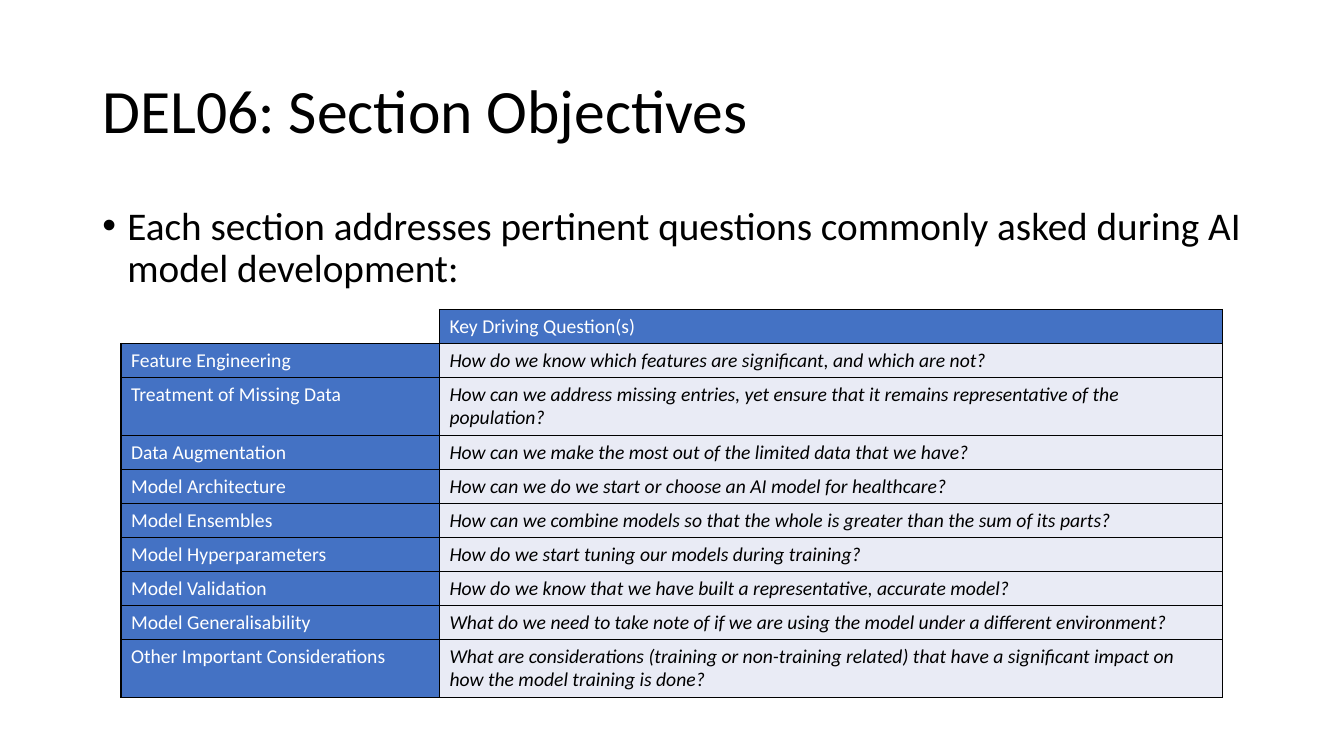
import lxml.etree
import pptx
import pptx.dml.color
import pptx.enum.text
import pptx.oxml.ns
import pptx.util

Pt = pptx.util.Pt
qn = pptx.oxml.ns.qn
BLACK = pptx.dml.color.RGBColor(0x00, 0x00, 0x00)
WHITE = pptx.dml.color.RGBColor(0xFF, 0xFF, 0xFF)
BLUE = pptx.dml.color.RGBColor(0x44, 0x72, 0xC4)
PALE_BLUE = pptx.dml.color.RGBColor(0xE9, 0xEB, 0xF5)

LINE_HEIGHT = 17.1
CELL_PADDING = 7.2
OBJECTIVES = [
    ("", "Key Driving Question(s)", 1),
    ("Feature Engineering", "How do we know which features are significant, and which are not?", 1),
    ("Treatment of Missing Data",
     "How can we address missing entries, yet ensure that it remains representative of the population?", 2),
    ("Data Augmentation", "How can we make the most out of the limited data that we have?", 1),
    ("Model Architecture", "How can we do we start or choose an AI model for healthcare?", 1),
    ("Model Ensembles",
     "How can we combine models so that the whole is greater than the sum of its parts?", 1),
    ("Model Hyperparameters", "How do we start tuning our models during training?", 1),
    ("Model Validation", "How do we know that we have built a representative, accurate model?", 1),
    ("Model Generalisability",
     "What do we need to take note of if we are using the model under a different environment?", 1),
    ("Other Important Considerations",
     "What are considerations (training or non-training related) that have a significant impact on "
     "how the model training is done?", 2),
]


def write(frame, text, size, color, italic=False):
    frame.word_wrap = True
    paragraph = frame.paragraphs[0]
    paragraph.text = text
    paragraph.font.name = "Calibri"
    paragraph.font.size = Pt(size)
    paragraph.font.color.rgb = color
    paragraph.font.italic = italic
    return paragraph


def add_border(cell, side, color):
    line = lxml.etree.SubElement(cell._tc.get_or_add_tcPr(), qn("a:ln" + side), w=str(Pt(1)))
    fill = lxml.etree.SubElement(line, qn("a:solidFill"))
    lxml.etree.SubElement(fill, qn("a:srgbClr"), val=str(color))


presentation = pptx.Presentation()
presentation.slide_width = Pt(960)
presentation.slide_height = Pt(540)
slide = presentation.slides.add_slide(presentation.slide_layouts[6])

title = slide.shapes.add_textbox(Pt(66), Pt(28.75), Pt(828), Pt(104.4)).text_frame
title.vertical_anchor = pptx.enum.text.MSO_ANCHOR.MIDDLE
write(title, "DEL06: Section Objectives", 44, BLACK).line_spacing = 0.9

body = slide.shapes.add_textbox(Pt(66), Pt(143.75), Pt(828), Pt(342.6)).text_frame
introduction = write(
    body, "Each section addresses pertinent questions commonly asked during AI model development:", 28, BLACK)
introduction.line_spacing = 0.9
introduction.space_before = Pt(10)
bullet = introduction._p.get_or_add_pPr()
bullet.set("marL", str(Pt(18)))
bullet.set("indent", str(-Pt(18)))
bullet_font = lxml.etree.Element(qn("a:buFont"), typeface="Arial")
bullet_mark = lxml.etree.Element(qn("a:buChar"), char="•")
run_defaults = bullet.find(qn("a:defRPr"))
run_defaults.addprevious(bullet_font)
run_defaults.addprevious(bullet_mark)

heights = [lines * LINE_HEIGHT + CELL_PADDING for _, _, lines in OBJECTIVES]
questions = slide.shapes.add_table(
    len(OBJECTIVES), 2, Pt(86.4), Pt(221), Pt(787), Pt(sum(heights))).table
questions.first_row = False
questions.horz_banding = False
questions.columns[0].width = Pt(227.5)
questions.columns[1].width = Pt(559.5)

for row, (section, question, _) in enumerate(OBJECTIVES):
    questions.rows[row].height = Pt(heights[row])
    for column, text in enumerate((section, question)):
        cell = questions.cell(row, column)
        is_question = row > 0 and column == 1
        paragraph = write(cell.text_frame, text, 14, BLACK if is_question else WHITE, is_question)
        for side in "LRTB":
            add_border(cell, side, WHITE if not text and side in "LT" else BLACK)
        if text:
            cell.fill.solid()
            cell.fill.fore_color.rgb = PALE_BLUE if is_question else BLUE
        else:
            cell.fill.background()
            lxml.etree.SubElement(paragraph._p, qn("a:endParaRPr"), sz="1400")

presentation.save("out.pptx")
